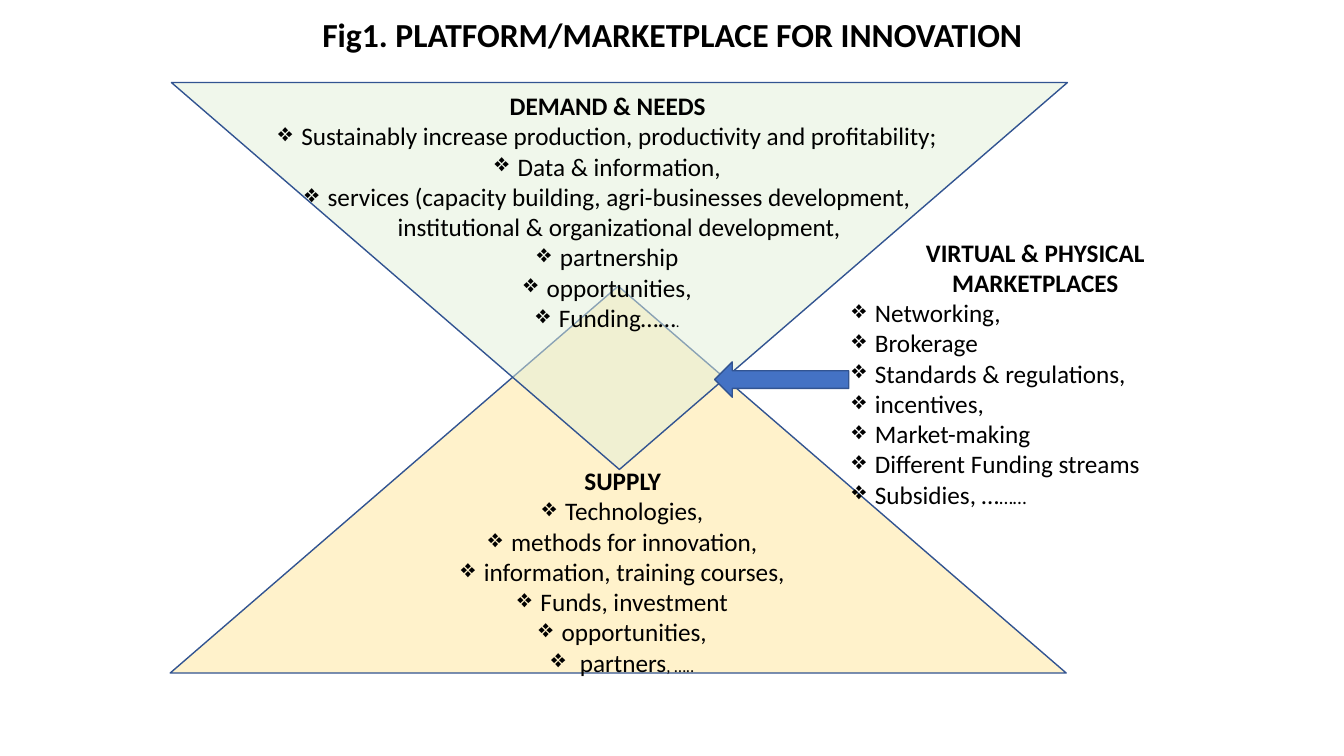
import pptx
import pptx.util
import pptx.dml.color
import pptx.enum.shapes
import pptx.enum.text
import pptx.oxml.ns
from lxml import etree

Cm, Pt = pptx.util.Cm, pptx.util.Pt
RGBColor = pptx.dml.color.RGBColor
SHAPE = pptx.enum.shapes.MSO_SHAPE
ALIGN = pptx.enum.text.PP_ALIGN
ANCHOR = pptx.enum.text.MSO_ANCHOR
qn = pptx.oxml.ns.qn

# Content: boxes are left, top, width, height in cm
TITLE = "Fig1. PLATFORM/MARKETPLACE FOR INNOVATION"
TITLE_BOX = (2.34, 0.28, 29.21, 1.27)

BLACK = RGBColor(0x00, 0x00, 0x00)
GOLD = RGBColor(0xFF, 0xE6, 0x99)
GREEN = RGBColor(0xE2, 0xF0, 0xD9)
BLUE = RGBColor(0x44, 0x72, 0xC4)
OUTLINE = RGBColor(0x32, 0x54, 0x91)

SHAPES = [
    {"kind": SHAPE.ISOSCELES_TRIANGLE, "box": (4.29, 7.21, 22.58, 9.75),
     "color": GOLD, "opacity": 50},
    {"kind": SHAPE.ISOSCELES_TRIANGLE, "box": (4.32, 2.08, 22.58, 9.75),
     "color": GREEN, "opacity": 50, "rotation": 180},
    {"kind": SHAPE.LEFT_ARROW, "box": (18.01, 9.12, 3.38, 0.89), "color": BLUE},
]

# The tail is the smaller text that ends the last item
LISTS = [
    {"heading": "SUPPLY", "box": (8.53, 11.63, 14.33, 4.42),
     "items": ["Technologies,", "methods for innovation,",
               "information, training courses,", "Funds, investment",
               "opportunities,", " partners"],
     "tail": ", …..", "tail_size": 12},
    {"heading": "DEMAND & NEEDS", "box": (6.3, 2.18, 18.03, 5.66),
     "items": ["Sustainably increase production, productivity and profitability;",
               "Data & information,",
               "services (capacity building, agri-businesses development, "
               "institutional & organizational development,",
               "partnership", "opportunities,", "Funding……"],
     "tail": ".", "tail_size": 10.5},
    {"heading": "VIRTUAL & PHYSICAL MARKETPLACES", "box": (21.29, 6.71, 9.6, 5.38),
     "items": ["Networking,", "Brokerage", "Standards & regulations,",
               "incentives,", "Market-making", "Different Funding streams",
               "Subsidies, …"],
     "tail": "……", "tail_size": 14,
     "item_align": ALIGN.LEFT, "anchor": ANCHOR.MIDDLE},
]
BULLET = "❖"
BULLET_INDENT = Cm(0.58)


def add_text(paragraph, text, size=18, bold=False, align=ALIGN.CENTER, bullet=False):
    """Add one run to the paragraph and format both."""
    paragraph.alignment = align
    if bullet:
        properties = paragraph._p.get_or_add_pPr()
        properties.set("marL", str(BULLET_INDENT))
        properties.set("indent", str(-BULLET_INDENT))
        etree.SubElement(properties, qn("a:buChar")).set("char", BULLET)
    run = paragraph.add_run()
    run.text = text
    run.font.name = "Calibri"
    run.font.size = Pt(size)
    run.font.bold = bold
    run.font.color.rgb = BLACK


def add_figure(slide, kind, box, color, opacity=100, rotation=0):
    shape = slide.shapes.add_shape(kind, *map(Cm, box))
    shape.shadow.inherit = False
    shape.rotation = rotation
    shape.fill.solid()
    shape.fill.fore_color.rgb = color
    if opacity < 100:
        fill_color = shape._element.spPr.find(qn("a:solidFill"))[0]
        etree.SubElement(fill_color, qn("a:alpha")).set("val", str(opacity * 1000))
    shape.line.color.rgb = OUTLINE
    shape.line.width = Pt(1)


def add_list(slide, heading, box, items, tail, tail_size,
             item_align=ALIGN.CENTER, anchor=ANCHOR.TOP):
    frame = slide.shapes.add_textbox(*map(Cm, box)).text_frame
    frame.word_wrap = True
    frame.vertical_anchor = anchor
    frame.margin_left = frame.margin_right = Cm(0.18)
    frame.margin_top = frame.margin_bottom = Cm(0.1)
    add_text(frame.paragraphs[0], heading, bold=True)
    for item in items:
        paragraph = frame.add_paragraph()
        add_text(paragraph, item, align=item_align, bullet=True)
    add_text(paragraph, tail, size=tail_size, align=item_align)


def main():
    presentation = pptx.Presentation()
    presentation.slide_width = Cm(33.87)
    presentation.slide_height = Cm(19.05)
    slide = presentation.slides.add_slide(presentation.slide_layouts[5])

    # Title
    title = slide.shapes.title
    title.left, title.top, title.width, title.height = map(Cm, TITLE_BOX)
    title.text_frame.auto_size = pptx.enum.text.MSO_AUTO_SIZE.NONE
    title.text_frame.vertical_anchor = ANCHOR.MIDDLE
    heading = title.text_frame.paragraphs[0]
    heading.line_spacing = 0.9
    add_text(heading, TITLE, size=24, bold=True)

    # Overlapping triangles with the arrow to their shared area
    for figure in SHAPES:
        add_figure(slide, **figure)

    # Bulleted lists
    for entry in LISTS:
        add_list(slide, **entry)

    presentation.save("out.pptx")


if __name__ == "__main__":
    main()
